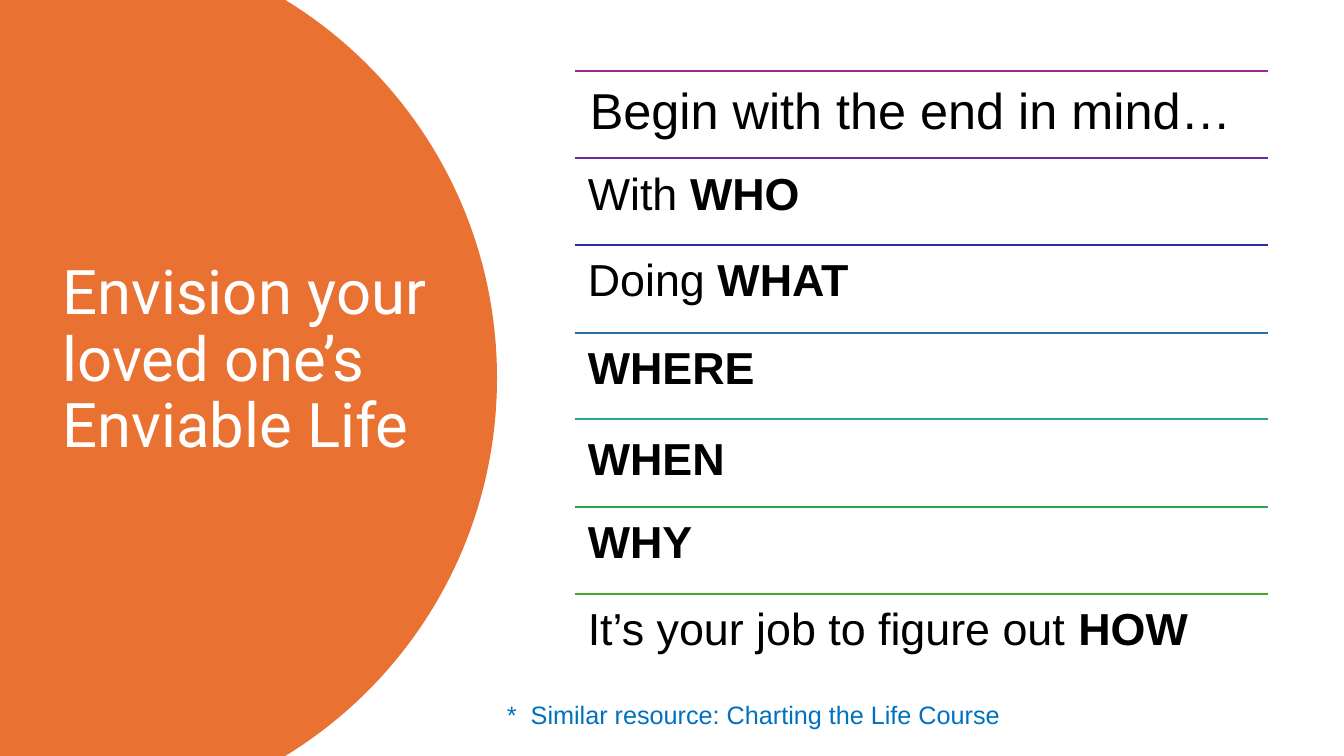
from pptx import Presentation
from pptx.dml.color import RGBColor
from pptx.enum.shapes import MSO_CONNECTOR
from pptx.enum.text import MSO_ANCHOR, MSO_AUTO_SIZE
from pptx.oxml.ns import qn
from pptx.util import Pt
from lxml import etree

PX = 9144  # EMU per px, 100 px to the inch
STRAIGHT = MSO_CONNECTOR.STRAIGHT
TOP, MIDDLE = MSO_ANCHOR.TOP, MSO_ANCHOR.MIDDLE
FIT_SHAPE = MSO_AUTO_SIZE.SHAPE_TO_FIT_TEXT

WIDTH, HEIGHT = 1333, 750
LIST_LEFT, LIST_WIDTH = 570, 688
LIST_TOP, ROW_PITCH, ROW_HEIGHT = 70.5, 86.5, 86
ARC_STEPS = 40

COLORS = {
    "panel": "E97132",
    "title": "FFFFFF",
    "text": "000000",
    "note": "0070C0",
}

# Rule colour, inset in px, runs of (text, size, bold)
ROWS = [
    ("A02891", 15, [("Begin with the end in mind…", 36, False)]),
    ("6A2AA0", 13, [("With ", 32, False), ("WHO", 32, True)]),
    ("2A2CA1", 13, [("Doing ", 32, False), ("WHAT", 32, True)]),
    ("2B6FA2", 13, [("WHERE", 32, True)]),
    ("2BA492", 13, [("WHEN", 32, True), (" ", 36, False)]),
    ("2BA550", 13, [("WHY", 32, True)]),
    ("4CA62C", 13, [("It’s your job to figure out ", 32, False), ("HOW", 32, True)]),
]


def px(length):
    return round(length * PX)


def rgb(color):
    return RGBColor.from_string(color)


def add_text(slide, runs, left, top, width, height, *, color, font="Arial",
             insets=(10, 5), anchor=TOP, line_spacing=None, auto_size=None):
    """Add a one-paragraph text box; insets are horizontal and vertical."""
    box = slide.shapes.add_textbox(px(left), px(top), px(width), px(height))
    frame = box.text_frame
    frame.word_wrap = True
    frame.vertical_anchor = anchor
    if auto_size is not None:
        frame.auto_size = auto_size
    frame.margin_left = frame.margin_right = px(insets[0])
    frame.margin_top = frame.margin_bottom = px(insets[1])
    paragraph = frame.paragraphs[0]
    if line_spacing:
        paragraph.line_spacing = line_spacing
    for text, size, bold in runs:
        run = paragraph.add_run()
        run.text = text
        run.font.name = font
        run.font.size = Pt(size)
        run.font.bold = bold
        run.font.color.rgb = rgb(color)


def add_rule(slide, left, top, width, color):
    rule = slide.shapes.add_connector(
        STRAIGHT, px(left), px(top), px(left + width), px(top))
    rule.line.color.rgb = rgb(color)
    rule.line.width = Pt(1.5)
    properties = rule._element.find(qn("p:spPr"))
    etree.SubElement(properties, qn("a:effectLst"))


def bezier_point(points, t):
    weights = ((1 - t) ** 3, 3 * t * (1 - t) ** 2, 3 * t ** 2 * (1 - t), t ** 3)
    return tuple(sum(weight * point[axis] for weight, point in zip(weights, points))
                 for axis in (0, 1))


def add_panel(slide):
    """Add the orange panel, whose right edge is an arc mirrored at mid height."""
    upper_curve = [(283, 0), (409, 77), (493, 216), (493, 375)]
    upper = [bezier_point(upper_curve, step / ARC_STEPS)
             for step in range(ARC_STEPS + 1)]
    lower = [(x, HEIGHT - y) for x, y in reversed(upper[:-1])]
    outline = [(px(x), px(y)) for x, y in upper + lower + [(0, HEIGHT)]]
    builder = slide.shapes.build_freeform(0, 0, scale=1.0)
    builder.add_line_segments(outline, close=True)
    panel = builder.convert_to_shape()
    panel.shadow.inherit = False
    panel.fill.solid()
    panel.fill.fore_color.rgb = rgb(COLORS["panel"])
    panel.line.fill.background()


def add_rows(slide):
    for index, (rule_color, inset, runs) in enumerate(ROWS):
        top = int(LIST_TOP + index * ROW_PITCH)
        add_rule(slide, LIST_LEFT, top, LIST_WIDTH, rule_color)
        add_text(slide, runs, LIST_LEFT, top, LIST_WIDTH, ROW_HEIGHT,
                 color=COLORS["text"], insets=(inset, inset), line_spacing=0.9)


def main():
    presentation = Presentation()
    presentation.slide_width = px(WIDTH)
    presentation.slide_height = px(HEIGHT)
    slide = presentation.slides.add_slide(presentation.slide_layouts[6])

    add_panel(slide)
    add_text(slide, [("Envision your loved one’s Enviable Life", 44, False)],
             52, 54, 389, 609, color=COLORS["title"], font="Roboto",
             anchor=MIDDLE, line_spacing=0.9)
    add_rows(slide)
    add_text(slide, [("*\u00a0 Similar resource: Charting the Life Course".replace("\u00a0", " "), 18, False)],
             493, 689, 667, 40, color=COLORS["note"], auto_size=FIT_SHAPE)

    presentation.save("out.pptx")


if __name__ == "__main__":
    main()
